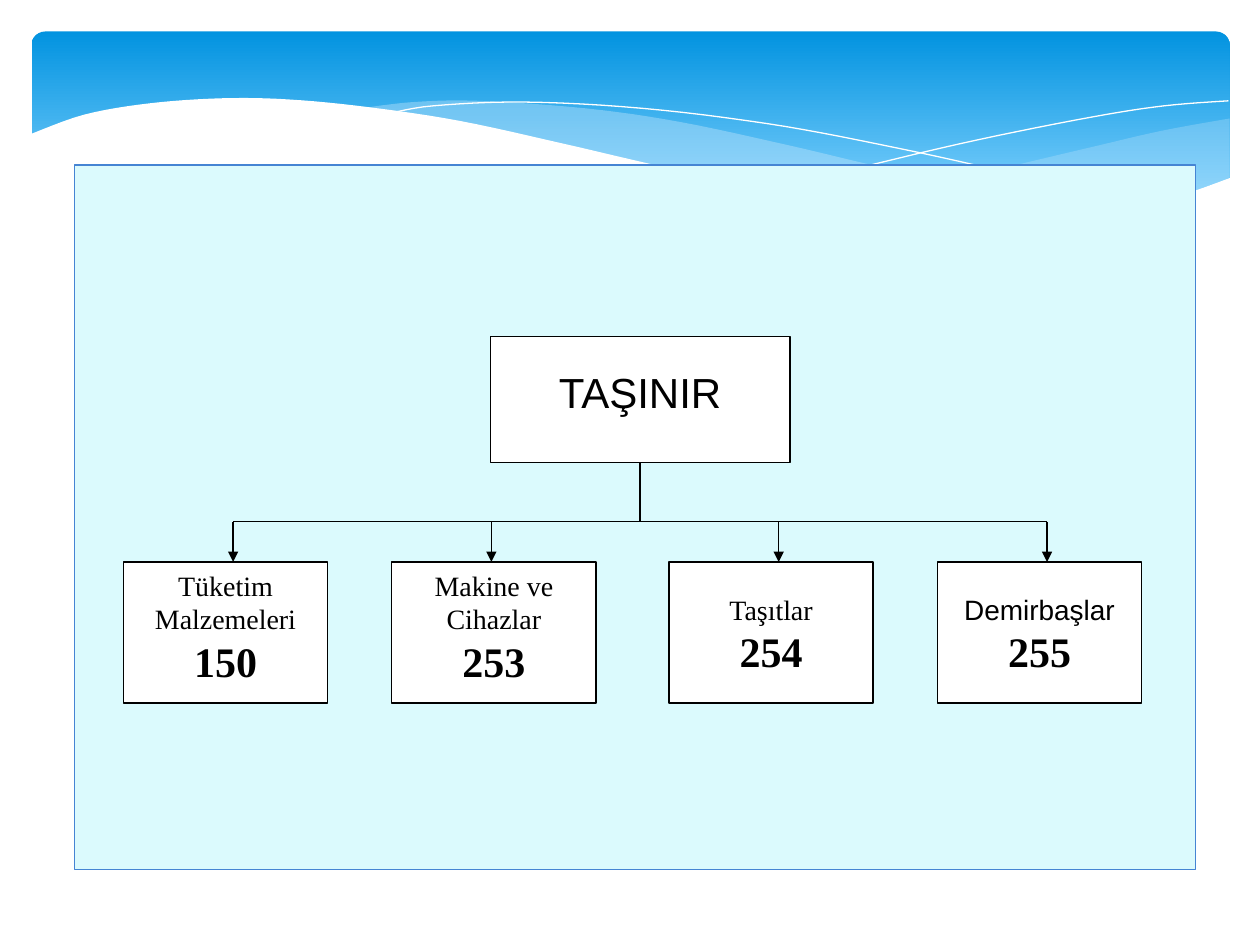
import dataclasses

import pptx
import pptx.dml.color
import pptx.enum.shapes
import pptx.enum.text
import pptx.oxml
import pptx.oxml.ns
import pptx.util
from pptx.util import Inches


@dataclasses.dataclass(frozen=True)
class Theme:
    white: str = "FFFFFF"
    ink: str = "000000"
    panel: str = "DBFAFD"
    panel_line: str = "4584D3"
    banner_top: str = "0293E0"
    banner_bottom: str = "83D3FE"
    wave: str = "C6E7FC"
    sans: str = "Arial"
    serif: str = "Times New Roman"
    label_size: int = 16
    large_size: int = 24
    line_width: float = 0.75
    inset: float = 0.05
    lowered_inset: float = 0.24


THEME = Theme()
SLIDE_WIDTH, SLIDE_HEIGHT = 10, 7.5
CHILD_TOP, CHILD_WIDTH, CHILD_HEIGHT = 4.46, 1.62, 1.12
ROOT_LEFT, ROOT_TOP, ROOT_WIDTH, ROOT_HEIGHT = 3.89, 2.67, 2.38, 1
BUS_Y = 4.14
CHILDREN = [
    (0.98, 1.85, "Tüketim Malzemeleri", "150", THEME.serif, THEME.inset),
    (3.11, 3.90, "Makine ve Cihazlar", "253", THEME.serif, THEME.inset),
    (5.31, 6.18, "Taşıtlar", "254", THEME.serif, THEME.lowered_inset),
    (7.44, 8.31, "Demirbaşlar", "255", THEME.sans, THEME.lowered_inset),
]

RIGHT_WAVE_TOP = [(9.76, 0.94), (9.21, 1.04), (8.61, 1.18), (7.53, 1.43), (6.61, 1.6)]
RIGHT_WAVE_BOTTOM = [(6.61, 1.6), (7.32, 1.68), (8.03, 1.72), (8.72, 1.69),
                     (9.28, 1.58), (9.76, 1.41)]
MIDDLE_WAVE_TOP = [(8.93, 1.67), (8.07, 1.54), (7.06, 1.34), (6.29, 1.16), (5.41, 0.97),
                   (4.65, 0.86), (3.8, 0.8), (3.28, 0.81), (2.86, 0.86)]
MIDDLE_WAVE_BOTTOM = [(2.86, 0.86), (3.62, 0.97), (4.49, 1.16), (5.66, 1.43), (6.5, 1.58),
                      (7.36, 1.69), (8.18, 1.73), (8.93, 1.67)]
FALLING_THREAD = [(3.09, 0.9), (3.44, 0.84), (4.16, 0.81), (5.1, 0.86), (6.08, 0.98),
                  (6.95, 1.14), (7.95, 1.36), (9.07, 1.66)]
RISING_THREAD = [(6.13, 1.51), (6.95, 1.3), (7.76, 1.11), (8.66, 0.93), (9.24, 0.84), (9.75, 0.8)]
WHITE_WAVE_TOP = [(9.77, 1.41), (9.3, 1.57), (8.75, 1.67), (8.09, 1.71), (7.26, 1.67),
                  (6.26, 1.53), (5.29, 1.33), (4.47, 1.14), (3.65, 0.96), (2.92, 0.85),
                  (2.3, 0.79), (1.77, 0.78), (1.19, 0.82), (0.67, 0.91), (0.23, 1.07)]
WHITE_WAVE_BASE = [(0.23, 2.24), (9.77, 2.24)]


def rgb(code):
    return pptx.dml.color.RGBColor.from_string(code)


def smooth(knots, steps=6):
    ends = [knots[0], *knots, knots[-1]]
    points = [knots[0]]
    for before, start, end, after in zip(ends, ends[1:], ends[2:], ends[3:]):
        for step in range(1, steps + 1):
            t = step / steps
            points.append(tuple(
                (2 * b + (c - a) * t + (2 * a - 5 * b + 4 * c - d) * t ** 2
                 + (3 * b - a - 3 * c + d) * t ** 3) / 2
                for a, b, c, d in zip(before, start, end, after)))
    return points


def style_line(line, color, width=THEME.line_width):
    line.color.rgb = rgb(color)
    line.width = pptx.util.Pt(width)


def add_curve(page, points, fill=None, opacity=100, line=None):
    places = [(Inches(x), Inches(y)) for x, y in points]
    builder = page.shapes.build_freeform(*places[0])
    builder.add_line_segments(places[1:], close=fill is not None)
    shape = builder.convert_to_shape()
    shape.shadow.inherit = False
    if fill:
        shape.fill.solid()
        shape.fill.fore_color.rgb = rgb(fill)
        if opacity < 100:
            color = shape.fill._xPr.find(".//" + pptx.oxml.ns.qn("a:srgbClr"))
            alpha = pptx.oxml.parse_xml(
                f'<a:alpha {pptx.oxml.ns.nsdecls("a")} val="{opacity * 1000}"/>')
            color.append(alpha)
    else:
        shape.fill.background()
    if line:
        style_line(shape.line, line, 0)
    else:
        shape.line.fill.background()


def add_banner(page):
    kind = pptx.enum.shapes.MSO_SHAPE.ROUNDED_RECTANGLE
    banner = page.shapes.add_shape(
        kind, Inches(0.25), Inches(0.25), Inches(9.51), Inches(1.56))
    banner.adjustments[0] = 0.07
    banner.shadow.inherit = False
    banner.line.fill.background()
    banner.fill.gradient()
    banner.fill.gradient_angle = 270
    stops = zip(banner.fill.gradient_stops, (0, 0.9), (THEME.banner_top, THEME.banner_bottom))
    for stop, position, color in stops:
        stop.position = position
        stop.color.rgb = rgb(color)
    add_curve(page, smooth(RIGHT_WAVE_TOP) + smooth(RIGHT_WAVE_BOTTOM), THEME.wave, 29)
    add_curve(page, smooth(MIDDLE_WAVE_TOP) + smooth(MIDDLE_WAVE_BOTTOM), THEME.wave, 40)
    for thread in (FALLING_THREAD, RISING_THREAD):
        add_curve(page, smooth(thread), line=THEME.white)
    add_curve(page, smooth(WHITE_WAVE_TOP) + WHITE_WAVE_BASE, THEME.white)


def add_box(page, left, top, width, height, fill=THEME.white, line=THEME.ink):
    box = page.shapes.add_shape(
        pptx.enum.shapes.MSO_SHAPE.RECTANGLE, *map(Inches, (left, top, width, height)))
    box.shadow.inherit = False
    box.fill.solid()
    box.fill.fore_color.rgb = rgb(fill)
    style_line(box.line, line)
    return box


def write(box, *lines, top_inset=THEME.inset):
    frame = box.text_frame
    frame.word_wrap = True
    frame.vertical_anchor = pptx.enum.text.MSO_ANCHOR.TOP
    frame.margin_top = Inches(top_inset)
    for index, (text, style) in enumerate(lines):
        para = frame.add_paragraph() if index else frame.paragraphs[0]
        add_text(para, text, **style)


def add_text(para, text, font=THEME.serif, size=THEME.label_size, bold=False):
    para.alignment = pptx.enum.text.PP_ALIGN.CENTER
    span = para.add_run()
    span.text = text
    span.font.name = font
    span.font.size = pptx.util.Pt(size)
    span.font.bold = bold
    span.font.color.rgb = rgb(THEME.ink)


def add_link(page, start, end, arrow=False):
    link = page.shapes.add_connector(
        pptx.enum.shapes.MSO_CONNECTOR.STRAIGHT, *map(Inches, (*start, *end)))
    style_line(link.line, THEME.ink)
    names = pptx.oxml.ns.nsdecls("a")
    if arrow:
        link.line._get_or_add_ln().append(
            pptx.oxml.parse_xml(f'<a:tailEnd {names} type="triangle"/>'))
    link._element.spPr.append(pptx.oxml.parse_xml(f"<a:effectLst {names}/>"))


def add_tree(page):
    root = add_box(page, ROOT_LEFT, ROOT_TOP, ROOT_WIDTH, ROOT_HEIGHT)
    write(root, ("TAŞINIR", dict(font=THEME.sans, size=THEME.large_size)),
          top_inset=THEME.lowered_inset)
    for left, arrow_x, label, code, font, inset in CHILDREN:
        box = add_box(page, left, CHILD_TOP, CHILD_WIDTH, CHILD_HEIGHT)
        write(box, (label, dict(font=font)),
              (code, dict(size=THEME.large_size, bold=True)), top_inset=inset)
        add_link(page, (arrow_x, BUS_Y), (arrow_x, CHILD_TOP), arrow=True)
    add_link(page, (CHILDREN[0][1], BUS_Y), (CHILDREN[-1][1], BUS_Y))
    center = ROOT_LEFT + ROOT_WIDTH / 2
    add_link(page, (center, ROOT_TOP + ROOT_HEIGHT), (center, BUS_Y))


def main():
    deck = pptx.Presentation()
    deck.slide_width, deck.slide_height = Inches(SLIDE_WIDTH), Inches(SLIDE_HEIGHT)
    page = deck.slides.add_slide(deck.slide_layouts[6])
    add_banner(page)
    add_box(page, 0.59, 1.31, 8.9, 5.59, fill=THEME.panel, line=THEME.panel_line)
    add_tree(page)
    deck.save("out.pptx")


if __name__ == "__main__":
    main()
